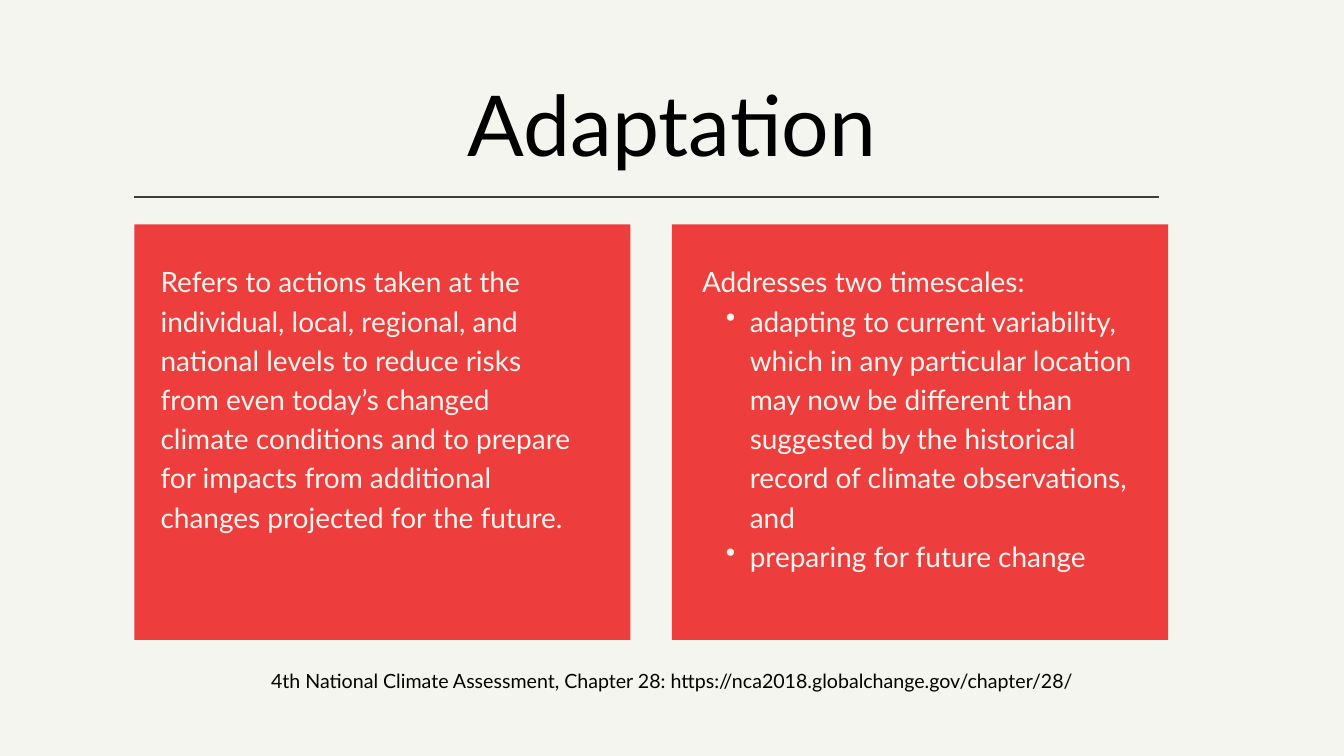
"""Build a slide that explains adaptation in two coloured panels."""
import lxml.etree
import pptx
import pptx.dml.color
import pptx.enum.shapes
import pptx.enum.text
import pptx.oxml.ns
import pptx.util
from pptx.util import Cm

FONT = "Lato"
COLORS = {
    "background": "F5F5EF",
    "panel": "ED3D3D",
    "rule": "3D3D3D",
    "dark": "000000",
    "light": "F5F5EF",
}
PANEL_TOP, PANEL_WIDTH, PANEL_HEIGHT = Cm(8.48), Cm(18.75), Cm(15.71)
BODY_TOP, BODY_HEIGHT = Cm(9.8), Cm(11.84)

DEFINITION = (
    "Refers to actions taken at the individual, local, regional, and national levels "
    "to reduce risks from even today’s changed climate conditions and to prepare for "
    "impacts from additional changes projected for the future."
)
TIMESCALES = [
    "adapting to current variability, which in any particular location may now be "
    "different than suggested by the historical record of climate observations, and",
    "preparing for future change",
]
SOURCE = (
    "4th National Climate Assessment, Chapter 28: "
    "https://nca2018.globalchange.gov/chapter/28/"
)


def color(name):
    """Return the named colour."""
    return pptx.dml.color.RGBColor.from_string(COLORS[name])


def add_bullet(paragraph):
    """Give a paragraph a hanging bullet."""
    paragraph.level = 1
    properties = paragraph._p.get_or_add_pPr()
    properties.set("marL", str(Cm(1.8)))
    properties.set("indent", str(Cm(-0.9)))
    bullet = lxml.etree.SubElement(properties, pptx.oxml.ns.qn("a:buChar"))
    bullet.set("char", "•")


def write_text(shape, lines, size, spacing, color_name, centered=False):
    """Write lines into a shape, with bullets after the first line."""
    frame = shape.text_frame
    frame.word_wrap = True
    frame.auto_size = pptx.enum.text.MSO_AUTO_SIZE.NONE
    frame.vertical_anchor = pptx.enum.text.MSO_ANCHOR.TOP
    frame.margin_left = frame.margin_right = 0
    frame.margin_top = frame.margin_bottom = 0
    alignment = pptx.enum.text.PP_ALIGN
    for index, line in enumerate(lines):
        paragraph = frame.add_paragraph() if index else frame.paragraphs[0]
        paragraph.text = line
        paragraph.alignment = alignment.CENTER if centered else alignment.LEFT
        paragraph.line_spacing = pptx.util.Pt(spacing)
        paragraph.font.name = FONT
        paragraph.font.size = pptx.util.Pt(size)
        paragraph.font.color.rgb = color(color_name)
        if index:
            add_bullet(paragraph)


def add_title(slide, text):
    """Place and fill the title placeholder."""
    title = slide.shapes.title
    title.left, title.top = Cm(10.49), Cm(3.07)
    title.width, title.height = Cm(29.82), Cm(3.61)
    write_text(title, [text], 90, 99, "dark", centered=True)


def add_rule(slide):
    """Draw the line below the title."""
    rule = slide.shapes.add_connector(
        pptx.enum.shapes.MSO_CONNECTOR.STRAIGHT, Cm(5.08), Cm(7.44), Cm(43.82), Cm(7.44)
    )
    rule.line.color.rgb = color("rule")
    rule.line.width = pptx.util.Pt(2.25)
    properties = rule._element.spPr
    lxml.etree.SubElement(properties, pptx.oxml.ns.qn("a:effectLst"))


def add_panel(slide, left, text_left, text_width, lines):
    """Draw a coloured panel with its body text."""
    panel = slide.shapes.add_shape(
        pptx.enum.shapes.MSO_SHAPE.RECTANGLE, left, PANEL_TOP, PANEL_WIDTH, PANEL_HEIGHT
    )
    panel.shadow.inherit = False
    panel.fill.solid()
    panel.fill.fore_color.rgb = color("panel")
    panel.line.fill.background()
    body = slide.shapes.add_textbox(text_left, BODY_TOP, text_width, BODY_HEIGHT)
    write_text(body, lines, 30, 42, "light")


def add_source(slide, text):
    """Add the centred source line."""
    source = slide.shapes.add_textbox(Cm(8.86), Cm(25.15), Cm(33.07), Cm(1.02))
    write_text(source, [text], 21, 29.4, "dark", centered=True)


def main():
    """Build and save the presentation."""
    presentation = pptx.Presentation()
    presentation.slide_width, presentation.slide_height = Cm(50.8), Cm(28.58)
    slide = presentation.slides.add_slide(presentation.slide_layouts[5])
    slide.background.fill.solid()
    slide.background.fill.fore_color.rgb = color("background")
    add_title(slide, "Adaptation")
    add_rule(slide)
    add_panel(slide, Cm(5.08), Cm(6.07), Cm(15.98), [DEFINITION])
    add_panel(
        slide, Cm(25.4), Cm(26.54), Cm(16.48), ["Addresses two timescales:", *TIMESCALES]
    )
    add_source(slide, SOURCE)
    presentation.save("out.pptx")


if __name__ == "__main__":
    main()
